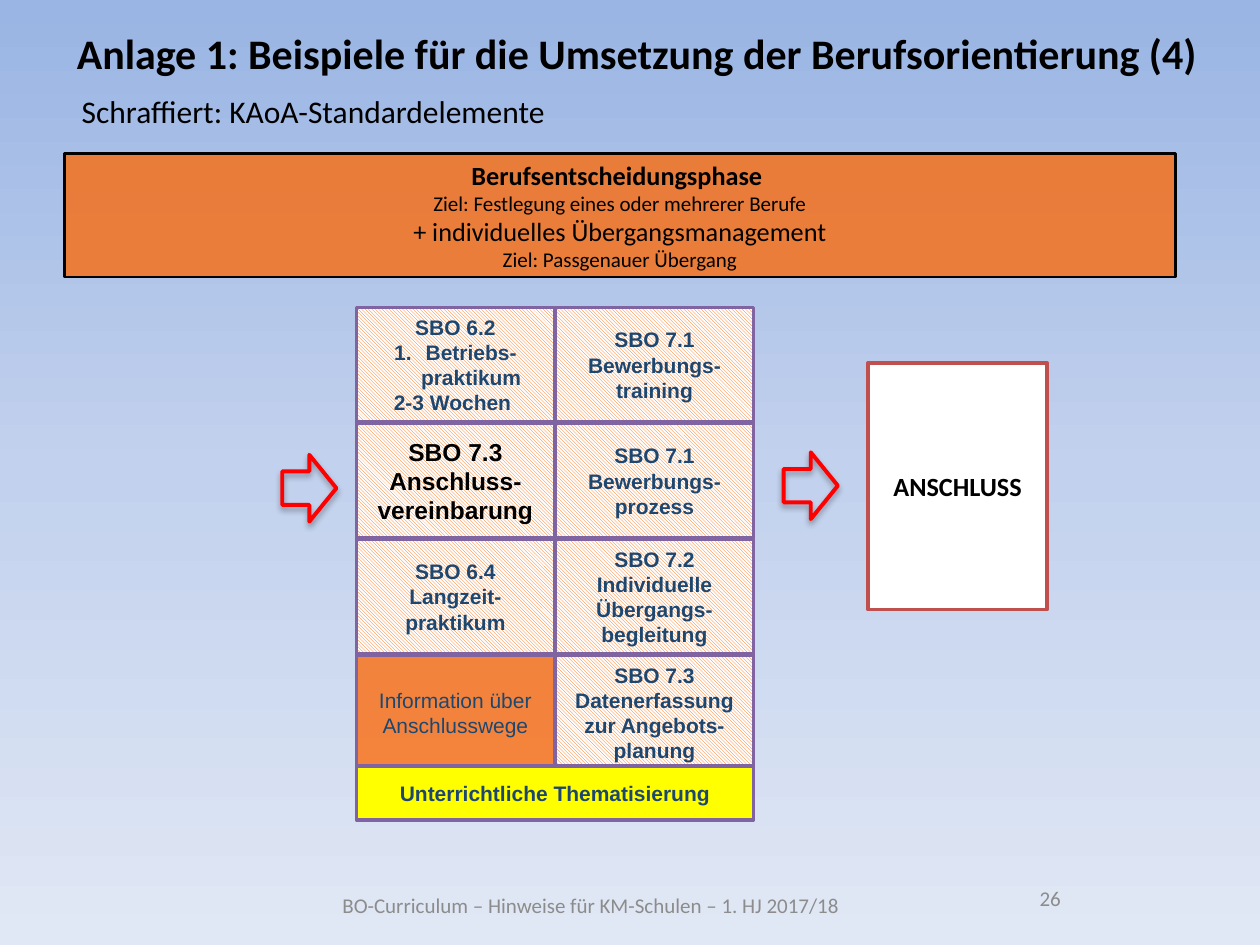
from copy import deepcopy

from lxml.etree import SubElement
from pptx import Presentation
from pptx.dml.color import RGBColor
from pptx.enum.dml import MSO_PATTERN
from pptx.enum.shapes import MSO_SHAPE
from pptx.enum.text import MSO_ANCHOR, PP_ALIGN
from pptx.oxml import parse_xml
from pptx.oxml.ns import nsdecls, qn
from pptx.util import Inches, Pt

ORANGE, PURPLE, NAVY, BLACK, RED = "FF6600", "8064A2", "1E4770", "000000", "FF0000"
COLUMNS = [
    [["SBO 6.2", "Betriebs-praktikum", "2-3 Wochen "],
     ["SBO 7.3", "Anschluss-vereinbarung"],
     ["SBO 6.4", "Langzeit-praktikum"],
     ["Information über Anschlusswege"]],
    [["SBO 7.1", "Bewerbungs-", "training"],
     ["SBO 7.1 Bewerbungs-prozess"],
     ["SBO 7.2", "Individuelle Übergangs-begleitung"],
     ["SBO 7.3 Datenerfassung zur Angebots-planung"]],
]


def rgb(value):
    """Turn a hex string into a colour."""
    return RGBColor.from_string(value)


def set_background(s, stops):
    """Fill the slide background with a vertical gradient."""
    fill = s.background.fill
    fill.gradient()
    fill.gradient_angle = 270
    stop_list = s.element.find(".//" + qn("a:gsLst"))
    stop_list.append(deepcopy(stop_list[-1]))
    for stop, (position, color) in zip(fill.gradient_stops, stops):
        stop.position = position
        stop.color.rgb = rgb(color)


def write(sp, lines, color=BLACK, font="Calibri", align=PP_ALIGN.CENTER,
          anchor=MSO_ANCHOR.MIDDLE, wrap=True):
    """Write (text, size, bold) lines as paragraphs."""
    tf = sp.text_frame
    tf.word_wrap, tf.vertical_anchor = wrap, anchor
    for i, (text, size, bold) in enumerate(lines):
        p = tf.add_paragraph() if i else tf.paragraphs[0]
        p.alignment = align
        r = p.add_run()
        r.text = text
        r.font.name, r.font.size, r.font.bold = font, Pt(size), bold
        r.font.color.rgb = rgb(color)


def add_label(s, box, text, size, color=BLACK, **style):
    """Add a one-line text box."""
    sp = s.shapes.add_textbox(*map(Inches, box))
    write(sp, [(text, size, False)], color, **style)


def add_box(s, box, line, width=2, fill=None, alpha=None, kind=MSO_SHAPE.RECTANGLE):
    """Add an outlined shape with an optional, possibly translucent fill."""
    sp = s.shapes.add_shape(kind, *map(Inches, box))
    sp.shadow.inherit = False
    sp.line.color.rgb, sp.line.width = rgb(line), Pt(width)
    if fill:
        sp.fill.solid()
        sp.fill.fore_color.rgb = rgb(fill)
    else:
        sp.fill.background()
    if alpha:
        color = sp.element.spPr.find(qn("a:solidFill"))[0]
        SubElement(color, qn("a:alpha"), val=str(alpha * 1000))
    return sp


def hatch(sp):
    """Give a shape the diagonal hatching of a standard element."""
    sp.fill.patterned()
    sp.fill.pattern = MSO_PATTERN.LIGHT_DOWNWARD_DIAGONAL
    sp.fill.fore_color.rgb = rgb(ORANGE)
    sp.fill.back_color.rgb = rgb("FFFFFF")


def number(p):
    """Turn a paragraph into a numbered item."""
    pPr = p._p.get_or_add_pPr()
    indent = Inches(0.25)
    pPr.set("marL", str(indent))
    pPr.set("indent", str(-indent))
    SubElement(pPr, qn("a:buFont"), typeface="+mj-lt")
    SubElement(pPr, qn("a:buAutoNum"), type="arabicPeriod")


def add_arrow(s, left, top):
    """Add a red outlined arrow with a soft shadow below it."""
    sp = add_box(s, (left, top, 0.43, 0.53), RED, 2.25, kind=MSO_SHAPE.RIGHT_ARROW)
    sp.element.spPr.find(qn("a:effectLst")).append(parse_xml(
        f'<a:outerShdw {nsdecls("a")} blurRad="{Pt(3.5)}" dist="{Pt(2.2)}" dir="5400000" '
        f'rotWithShape="0"><a:srgbClr val="{BLACK}"><a:alpha val="32000"/></a:srgbClr>'
        '</a:outerShdw>'))


def add_modules(s):
    """Add the grid of modules and the bar below it."""
    for col, modules in enumerate(COLUMNS):
        for row, texts in enumerate(modules):
            box = (2.83 + 1.58 * col, 2.44 + 0.92 * row, 1.57, 0.91)
            info = (col, row) == (0, 3)
            agreement = (col, row) == (0, 1)
            sp = add_box(s, box, PURPLE, fill=ORANGE, alpha=75 if info else None)
            if not info:
                hatch(sp)
            size = 14 if agreement else 12
            write(sp, [(text, size, not info) for text in texts],
                  BLACK if agreement else NAVY, "Arial")
            if (col, row) == (0, 0):
                number(sp.text_frame.paragraphs[1])
    bar = add_box(s, (2.83, 6.08, 3.15, 0.43), PURPLE, fill="FFFF00")
    write(bar, [("Unterrichtliche Thematisierung", 12, True)], NAVY, "Arial")


def main():
    """Build the slide and save it."""
    prs = Presentation()
    prs.slide_width, prs.slide_height = Inches(10), Inches(7.5)
    s = prs.slides.add_slide(prs.slide_layouts[5])
    set_background(s, [(0, "9AB5E4"), (0.5, "C2D1ED"), (1, "E1E8F5")])

    title = s.shapes.title
    title.left, title.top, title.width, title.height = map(Inches, (0.51, 0.17, 9.54, 0.5))
    write(title, [("Anlage 1: Beispiele für die Umsetzung der Berufsorientierung (4)", 24, True)],
          align=PP_ALIGN.LEFT, anchor=MSO_ANCHOR.TOP)
    add_label(s, (0.55, 0.68, 3.98, 0.4), "Schraffiert: KAoA-Standardelemente", 18,
              align=PP_ALIGN.LEFT, anchor=MSO_ANCHOR.TOP, wrap=False)
    add_label(s, (2.17, 6.98, 5.04, 0.4), "BO-Curriculum – Hinweise für KM-Schulen – 1. HJ 2017/18",
              12, "8C8C8C")
    add_label(s, (7.17, 6.98, 2.33, 0.4), "26", 12, "8C8C8C", anchor=MSO_ANCHOR.TOP)

    phase = add_box(s, (0.51, 1.22, 8.82, 0.98), BLACK, 1.5, ORANGE, 75)
    write(phase, [("Berufsentscheidungsphase ", 15, True),
                  ("Ziel: Festlegung eines oder mehrerer Berufe", 12, False),
                  ("+ individuelles Übergangsmanagement", 15, False),
                  ("Ziel: Passgenauer Übergang", 12, False)], wrap=False)
    add_modules(s)
    add_arrow(s, 2.24, 3.61)
    add_arrow(s, 6.22, 3.59)
    follow_up = add_box(s, (6.89, 2.88, 1.42, 1.96), "C0504D", fill="FFFFFF")
    write(follow_up, [("ANSCHLUSS", 15, True)], wrap=False)
    prs.save("out.pptx")


if __name__ == "__main__":
    main()
